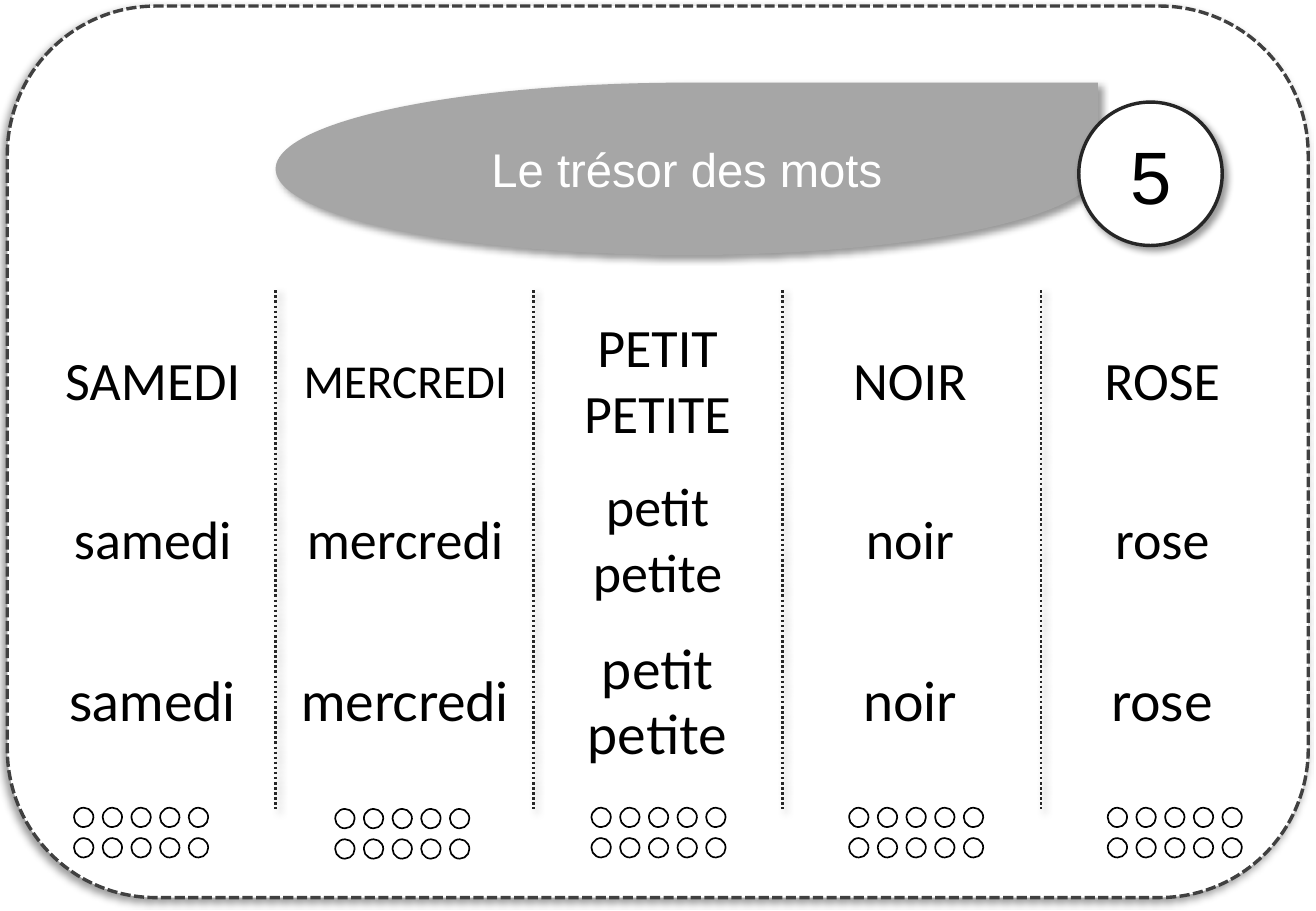
"""Build the word-treasure card number 5."""
from dataclasses import dataclass

from lxml import etree
from pptx import Presentation
from pptx.dml.color import RGBColor
from pptx.enum.dml import MSO_LINE
from pptx.enum.shapes import MSO_CONNECTOR, MSO_SHAPE
from pptx.enum.text import MSO_ANCHOR, MSO_AUTO_SIZE, PP_ALIGN
from pptx.oxml.ns import qn
from pptx.util import Pt

ROUND, DROP, OVAL = MSO_SHAPE.ROUNDED_RECTANGLE, MSO_SHAPE.TEAR, MSO_SHAPE.OVAL
DASH, DOT = MSO_LINE.SQUARE_DOT, MSO_LINE.ROUND_DOT
STRAIGHT = MSO_CONNECTOR.STRAIGHT
CENTER = PP_ALIGN.CENTER
TOP, MIDDLE = MSO_ANCHOR.TOP, MSO_ANCHOR.MIDDLE
FIXED = MSO_AUTO_SIZE.NONE
PLAIN = "{2D5ABB26-0587-4C30-8999-92F81FD0307C}"


@dataclass(frozen=True)
class Theme:
    white: str = "FFFFFF"
    black: str = "000000"
    gray: str = "A6A6A6"
    edge: str = "404040"
    dark: str = "262626"
    head: str = "Arial"
    print: str = "Calibri"
    script: str = "Lato"
    title: int = 28
    digit: int = 44
    word: int = 32
    small: int = 28


WORDS = ["samedi", "mercredi", "petit\npetite", "noir", "rose"]
RULES = [163.4, 316.1, 463.7, 617]
DOTS = [(43.9, 478.8), (198.7, 479.5), (350.6, 478.8), (503.3, 478.8), (656.6, 478.8)]
DROP_BOX = (163.4, 49, 487.4, 102.2)


def rgb(color):
    return RGBColor.from_string(color)


def write(frame, text, font, size, color, anchor=MIDDLE):
    frame.word_wrap = True
    frame.vertical_anchor = anchor
    frame.text = text
    for para in frame.paragraphs:
        props = para._p.get_or_add_pPr()
        etree.SubElement(props, qn("a:buNone"))
        props.set("marL", "0")
        props.set("indent", "0")
        para.alignment = CENTER
        para.space_before = Pt(0)
        for run in para.runs:
            run.font.name = font
            run.font.size = Pt(size)
            run.font.color.rgb = rgb(color)


class Card:
    def __init__(self, slide, theme):
        self.slide, self.theme = slide, theme

    def shade(self, item, angle=None):
        props = item.element.spPr
        effect = props.find(qn("a:effectLst"))
        if effect is None:
            effect = etree.SubElement(props, qn("a:effectLst"))
        if angle is None:
            return
        cast = etree.SubElement(effect, qn("a:outerShdw"), blurRad=str(Pt(4)),
                                dist=str(Pt(3)), dir=str(angle * 60000),
                                algn="tl", rotWithShape="0")
        tint = etree.SubElement(cast, qn("a:srgbClr"), val=self.theme.black)
        etree.SubElement(tint, qn("a:alpha"), val="40000")

    def stroke(self, line, color, width, dash=None):
        line.color.rgb = rgb(color)
        line.width = Pt(width)
        if dash:
            line.dash_style = dash

    def shape(self, kind, box, fill, line=None, angle=None, group=None):
        home = group or self.slide
        item = home.shapes.add_shape(kind, *map(Pt, box))
        item.shadow.inherit = False
        item.fill.solid()
        item.fill.fore_color.rgb = rgb(fill)
        if line:
            self.stroke(item.line, *line)
        else:
            item.line.fill.background()
        self.shade(item, angle)

    def rule(self, x, top, end):
        item = self.slide.shapes.add_connector(STRAIGHT, Pt(x), Pt(top), Pt(x), Pt(end))
        self.stroke(item.line, self.theme.dark, 1.5, DOT)
        self.shade(item, 45)

    def dots(self, left, top):
        group = self.slide.shapes.add_group_shape()
        for row in range(2):
            for col in range(5):
                box = (left + 17 * col, top + 18 * row, 11.5, 11.5)
                self.shape(OVAL, box, self.theme.white, (self.theme.black, 1), group=group)

    def holder(self, index, box, text, size, color, anchor=MIDDLE, inset=3.6):
        item = self.slide.placeholders[index]
        item.left, item.top, item.width, item.height = map(Pt, box)
        frame = item.text_frame
        frame.auto_size = FIXED
        frame.margin_top = Pt(inset)
        write(frame, text, self.theme.head, size, color, anchor)
        self.slide.shapes.element.append(item.element)

    def table(self, rows, box):
        item = self.slide.shapes.add_table(len(rows), len(rows[0][0]), *map(Pt, box))
        for style in item.element.iter(qn("a:tableStyleId")):
            style.text = PLAIN
        grid = item.table
        grid.first_row = grid.horz_banding = False
        for r, (words, font) in enumerate(rows):
            for c, word in enumerate(words):
                cell = grid.cell(r, c)
                cell.fill.background()
                cell.vertical_anchor = MIDDLE
                size = self.theme.small if word == "MERCREDI" else self.theme.word
                write(cell.text_frame, word, font, size, self.theme.black)


def main():
    deck = Presentation()
    deck.slide_width, deck.slide_height = Pt(780), Pt(540)
    theme = Theme()
    card = Card(deck.slides.add_slide(deck.slide_layouts[1]), theme)
    card.shape(ROUND, (4.3, 3.6, 771.1, 528.5), theme.white, (theme.edge, 2, DASH), 135)
    for x in RULES:
        card.rule(x, 172.1, 479.5)
    for spot in DOTS:
        card.dots(*spot)
    card.shape(DROP, DROP_BOX, theme.gray, angle=45)
    card.holder(0, DROP_BOX, "Le trésor des mots", theme.title, theme.white)
    card.shape(OVAL, (639.4, 60.5, 85, 85), theme.white, (theme.dark, 2), 45)
    card.holder(1, (640.1, 69.8, 85, 79.2), "5", theme.digit, theme.black, TOP, 7.2)
    rows = [([word.upper() for word in WORDS], theme.print),
            (WORDS, theme.print), (WORDS, theme.script)]
    card.table(rows, (15.8, 179.3, 748, 283.5))
    deck.save("out.pptx")


if __name__ == "__main__":
    main()
